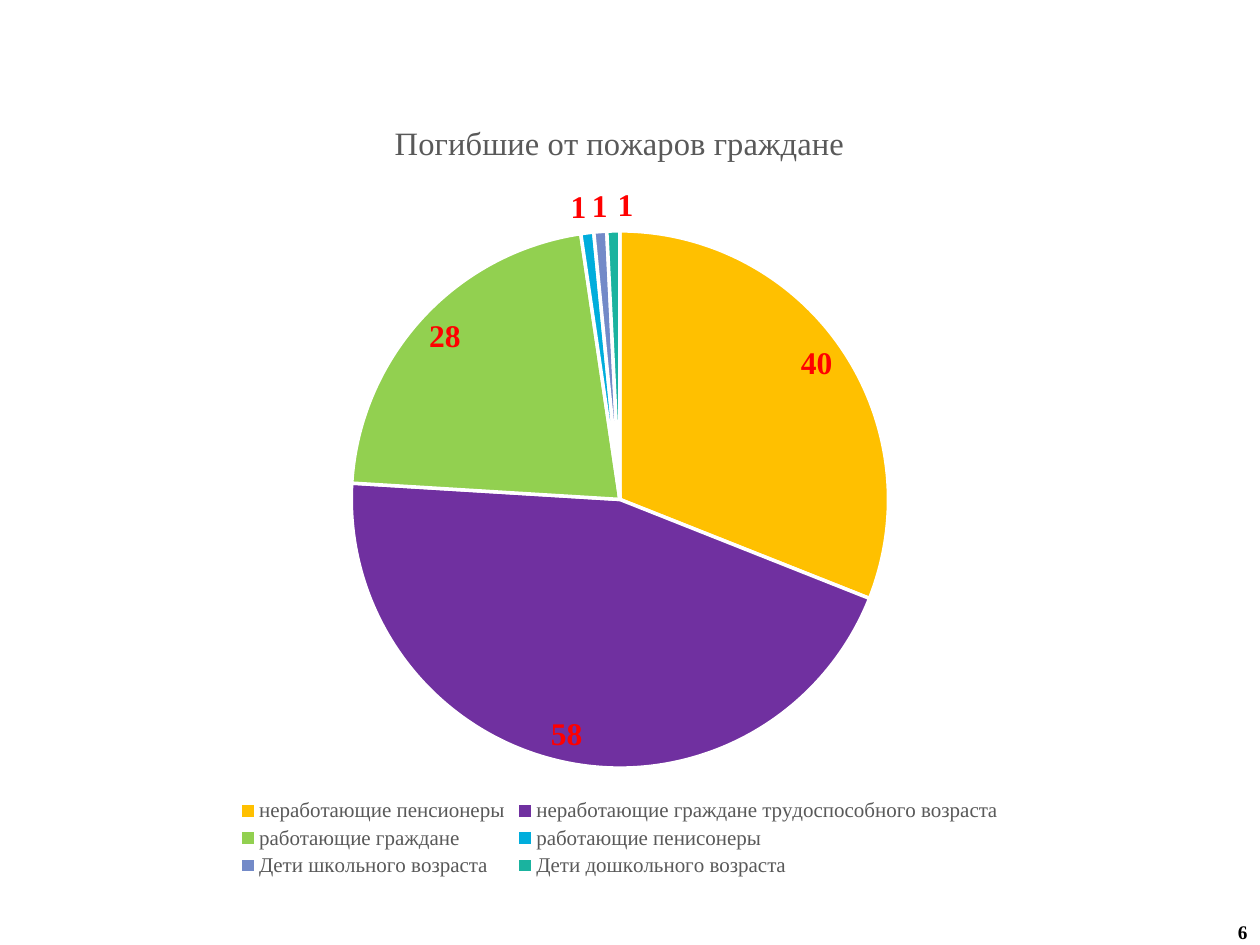
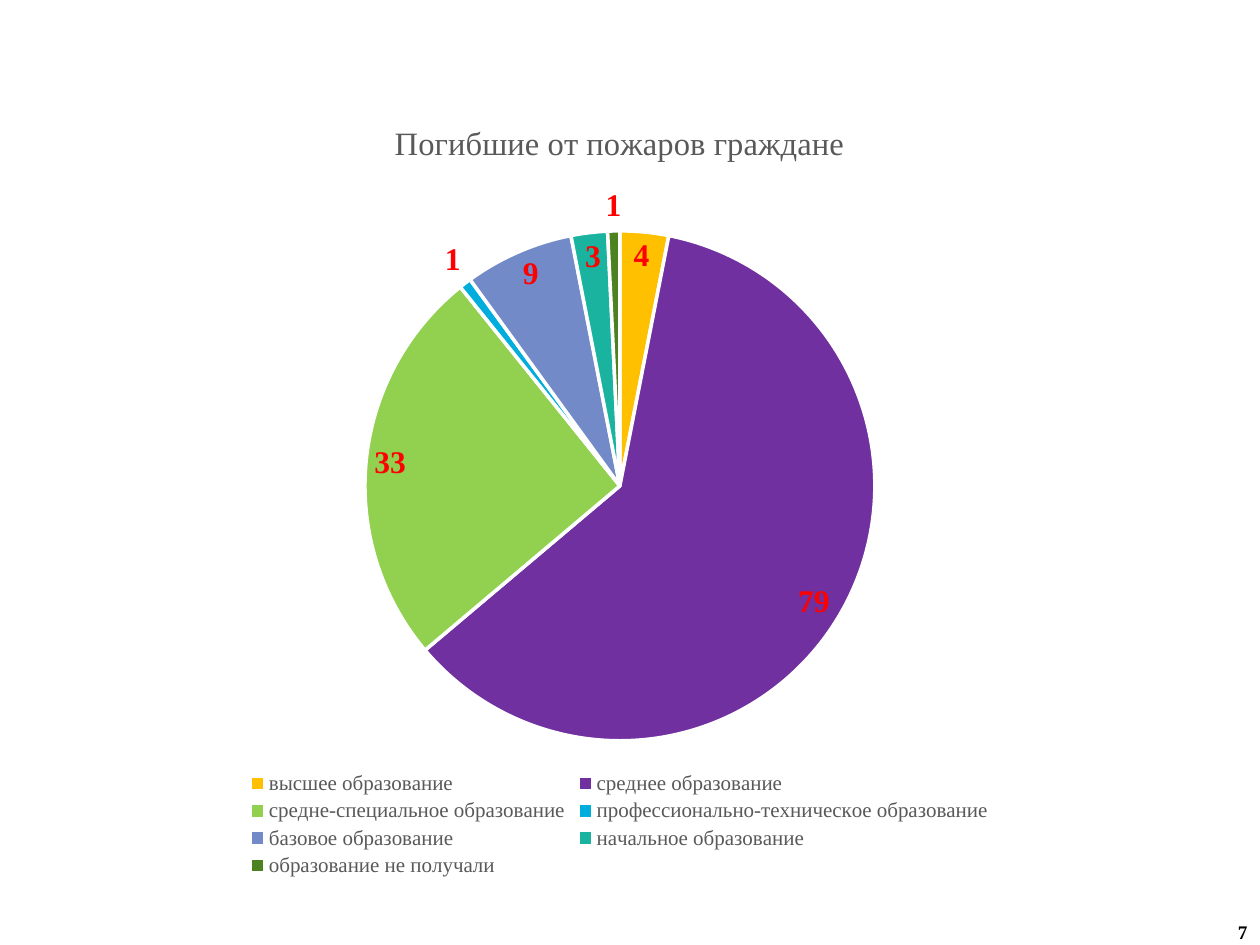
from dataclasses import dataclass

from pptx import Presentation
from pptx.chart.data import CategoryChartData
from pptx.dml.color import RGBColor
from pptx.enum.chart import XL_CHART_TYPE, XL_LABEL_POSITION, XL_LEGEND_POSITION
from pptx.enum.text import MSO_ANCHOR, PP_ALIGN
from pptx.util import Inches, Pt


@dataclass(frozen=True)
class Theme:
    font: str = "Times New Roman"
    text: str = "595959"
    value: str = "FF0000"
    number: str = "000000"
    gap: str = "FFFFFF"
    slices: tuple = ("FFC000", "7030A0", "92D050", "00ADDC",
                     "738AC8", "1AB39F", "4C821F")
    title_size: float = 18.6
    value_size: float = 18
    legend_size: float = 12
    number_size: float = 11
    gap_width: float = 2


THEME = Theme()
WIDTH, HEIGHT = Inches(10), Inches(7.5)

# Boxes as shares of the slide: left, top, width, height
CHART_BOX = (0.05, 0.1, 0.884, 0.833)
NUMBER_BOX = (0.792, 0.967, 0.208, 0.033)

TITLE = "Погибшие от пожаров граждане"
BY_OCCUPATION = {
    "неработающие пенсионеры": 40,
    "неработающие граждане трудоспособного возраста": 58,
    "работающие граждане": 28,
    "работающие пенисонеры": 1,
    "Дети школьного возраста": 1,
    "Дети дошкольного возраста": 1,
}
BY_EDUCATION = {
    "высшее образование": 4,
    "среднее образование": 79,
    "средне-специальное образование": 33,
    "профессионально-техническое образование": 1,
    "базовое образование": 9,
    "начальное образование": 3,
    "образование не получали": 1,
}


def place(box):
    left, top, width, height = box
    return (int(left * WIDTH), int(top * HEIGHT),
            int(width * WIDTH), int(height * HEIGHT))


def set_font(font, size, color, bold=False):
    font.name = THEME.font
    font.size = Pt(size)
    font.bold = bold
    font.color.rgb = RGBColor.from_string(color)


def add_pie(s, title, counts):
    data = CategoryChartData()
    data.categories = list(counts)
    data.add_series(title, list(counts.values()))
    chart = s.shapes.add_chart(XL_CHART_TYPE.PIE, *place(CHART_BOX), data).chart
    chart.font.name = THEME.font
    chart.font.size = Pt(10)

    # Title and legend
    chart.has_title = True
    chart.chart_title.include_in_layout = False
    p = chart.chart_title.text_frame.paragraphs[0]
    p.text = title
    set_font(p.font, THEME.title_size, THEME.text)
    chart.has_legend = True
    chart.legend.position = XL_LEGEND_POSITION.BOTTOM
    chart.legend.include_in_layout = False
    set_font(chart.legend.font, THEME.legend_size, THEME.text)

    # Slices
    plot = chart.plots[0]
    plot.vary_by_categories = True
    for i, color in zip(range(len(counts)), THEME.slices):
        fmt = plot.series[0].points[i].format
        fmt.fill.solid()
        fmt.fill.fore_color.rgb = RGBColor.from_string(color)
        fmt.line.color.rgb = RGBColor.from_string(THEME.gap)
        fmt.line.width = Pt(THEME.gap_width)

    # Values
    labels = plot.series[0].data_labels
    labels.show_value = True
    labels.show_percentage = False
    labels.position = XL_LABEL_POSITION.BEST_FIT
    set_font(labels.font, THEME.value_size, THEME.value, bold=True)


def add_page_number(s, number):
    tf = s.shapes.add_textbox(*place(NUMBER_BOX)).text_frame
    tf.word_wrap = True
    tf.vertical_anchor = MSO_ANCHOR.TOP
    p = tf.paragraphs[0]
    p.text = str(number)
    p.alignment = PP_ALIGN.RIGHT
    set_font(p.font, THEME.number_size, THEME.number, bold=True)


def main():
    prs = Presentation()
    prs.slide_width, prs.slide_height = WIDTH, HEIGHT
    for number, counts in enumerate((BY_OCCUPATION, BY_EDUCATION), start=6):
        s = prs.slides.add_slide(prs.slide_layouts[6])
        add_pie(s, TITLE, counts)
        add_page_number(s, number)
    prs.save("out.pptx")


if __name__ == "__main__":
    main()
